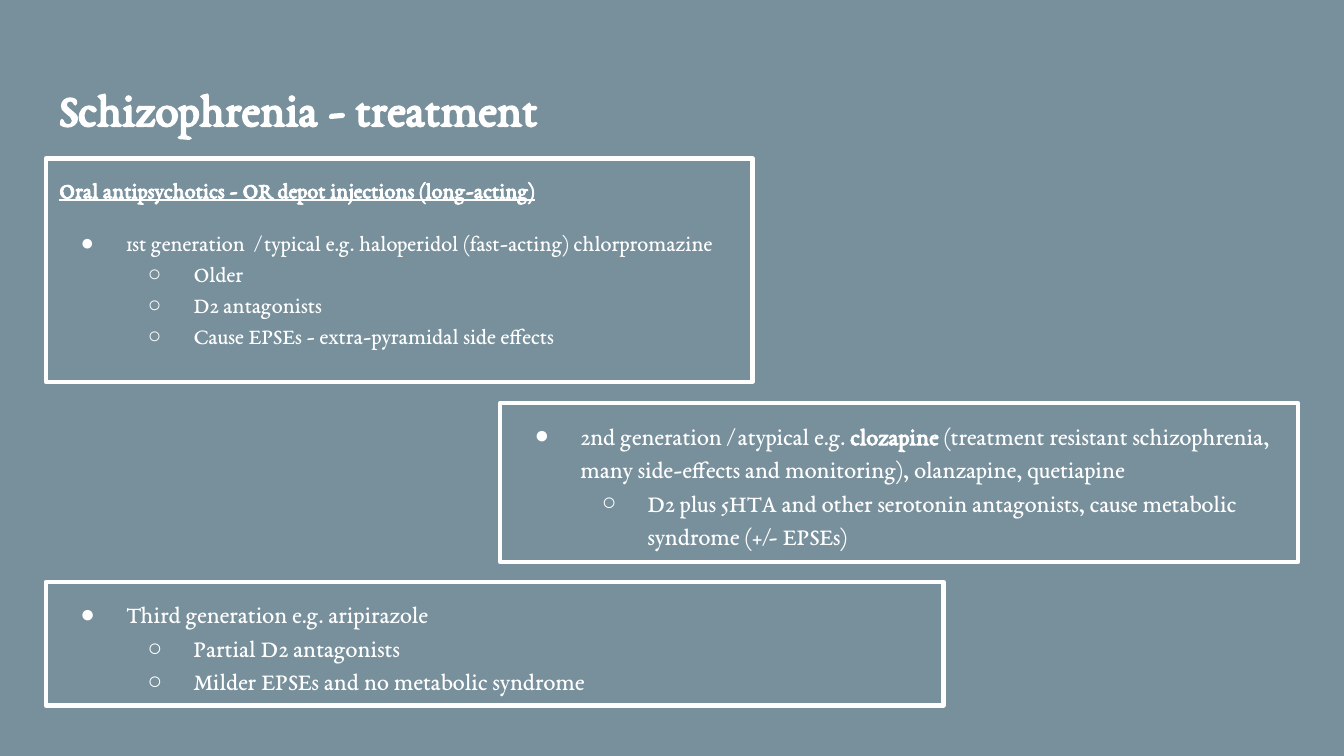
from lxml.etree import SubElement as Sub
from pptx import Presentation
from pptx.dml.color import RGBColor as Rgb
from pptx.enum.shapes import MSO_SHAPE as Kind
from pptx.enum.text import MSO_ANCHOR as Anchor, MSO_AUTO_SIZE as Fit, PP_ALIGN as Align
from pptx.oxml.ns import qn
from pptx.util import Inches, Pt

FACE = "EB Garamond"
WHITE = "FFFFFF"
SLATE = "78909C"
MARKS = "●○"

ORAL = [
    (None, [("Oral antipsychotics - OR depot injections (long-acting)", {"bold": True, "underline": True})]),
    (0, [("1st generation  / typical e.g. haloperidol (fast-acting) chlorpromazine", {})]),
    (1, [("Older", {})]),
    (1, [("D2 antagonists", {})]),
    (1, [("Cause EPSEs - extra-pyramidal side effects", {})]),
]
THIRD = [
    (0, [("Third generation e.g. aripirazole", {})]),
    (1, [("Partial D2 antagonists", {})]),
    (1, [("Milder EPSEs and no metabolic syndrome", {})]),
]
SECOND = [
    (0, [
        ("2nd generation / atypical e.g. ", {}),
        ("clozapine", {"bold": True}),
        (" (treatment resistant schizophrenia, many side-effects and monitoring), olanzapine, quetiapine", {}),
    ]),
    (1, [("D2 plus 5HTA and other serotonin antagonists, cause metabolic syndrome (+/- EPSEs)", {})]),
]


def paint(color, code):
    color.rgb = Rgb.from_string(code)


def apply(item, values):
    for name, value in values.items():
        setattr(item, name, value)


def place(shape, left, top, width, height):
    apply(shape, {"left": Inches(left), "top": Inches(top),
                  "width": Inches(width), "height": Inches(height)})


def set_frame(frame, fit):
    inset = Inches(0.1)
    apply(frame, {"word_wrap": True, "auto_size": fit, "vertical_anchor": Anchor.TOP,
                  "margin_left": inset, "margin_top": inset,
                  "margin_right": inset, "margin_bottom": inset})


def add_run(para, text, size, style):
    run = para.add_run()
    run.text = text
    apply(run.font, {"name": FACE, "size": Pt(size), "bold": False, **style})
    paint(run.font.color, WHITE)


def set_mark(para, level):
    props = para._p.get_or_add_pPr()
    if level is None:
        props.set("marL", "0")
        props.set("indent", "0")
        Sub(props, qn("a:buNone"))
        return
    para.level = level
    props.set("marL", str(Inches(0.5 * (level + 1))))
    props.set("indent", str(Inches(-0.34)))
    Sub(Sub(props, qn("a:buClr")), qn("a:srgbClr"), val=WHITE)
    Sub(props, qn("a:buFont"), typeface="Arial")
    Sub(props, qn("a:buChar"), char=MARKS[level])


def fill_box(shape, lines, size, fit):
    shape.fill.background()
    paint(shape.line.color, WHITE)
    shape.line.width = Pt(2.25)
    frame = shape.text_frame
    set_frame(frame, fit)
    last = 0
    for i, (level, runs) in enumerate(lines):
        para = frame.add_paragraph() if i else frame.paragraphs[0]
        set_mark(para, level)
        gap = 12 if i and last is None else 0
        apply(para, {"alignment": Align.LEFT, "line_spacing": 1.15,
                     "space_before": Pt(gap), "space_after": Pt(0)})
        for text, style in runs:
            add_run(para, text, size, style)
        last = level


def add_title(slide, text):
    title = slide.shapes.title
    place(title, 0.34, 0.49, 9.32, 0.63)
    set_frame(title.text_frame, Fit.NONE)
    para = title.text_frame.paragraphs[0]
    para.alignment = Align.LEFT
    add_run(para, text, 25.2, {"bold": True})


def add_list(slide, area, lines):
    body = slide.placeholders[1]
    place(body, *area)
    fill_box(body, lines, 12, Fit.NONE)


def add_box(slide, area, lines):
    box = slide.shapes.add_shape(Kind.RECTANGLE, *map(Inches, area))
    box.shadow.inherit = False
    fill_box(box, lines, 13, Fit.SHAPE_TO_FIT_TEXT)


def main():
    deck = Presentation()
    wide = Inches(10)
    apply(deck, {"slide_width": wide, "slide_height": wide * 9 // 16})
    slide = deck.slides.add_slide(deck.slide_layouts[1])
    back = slide.background.fill
    back.solid()
    paint(back.fore_color, SLATE)
    add_title(slide, "Schizophrenia - treatment")
    add_list(slide, (0.34, 1.18, 5.26, 1.66), ORAL)
    add_box(slide, (0.34, 4.33, 6.68, 0.92), THIRD)
    add_box(slide, (3.72, 3, 5.94, 1.18), SECOND)
    deck.save("out.pptx")


if __name__ == "__main__":
    main()
